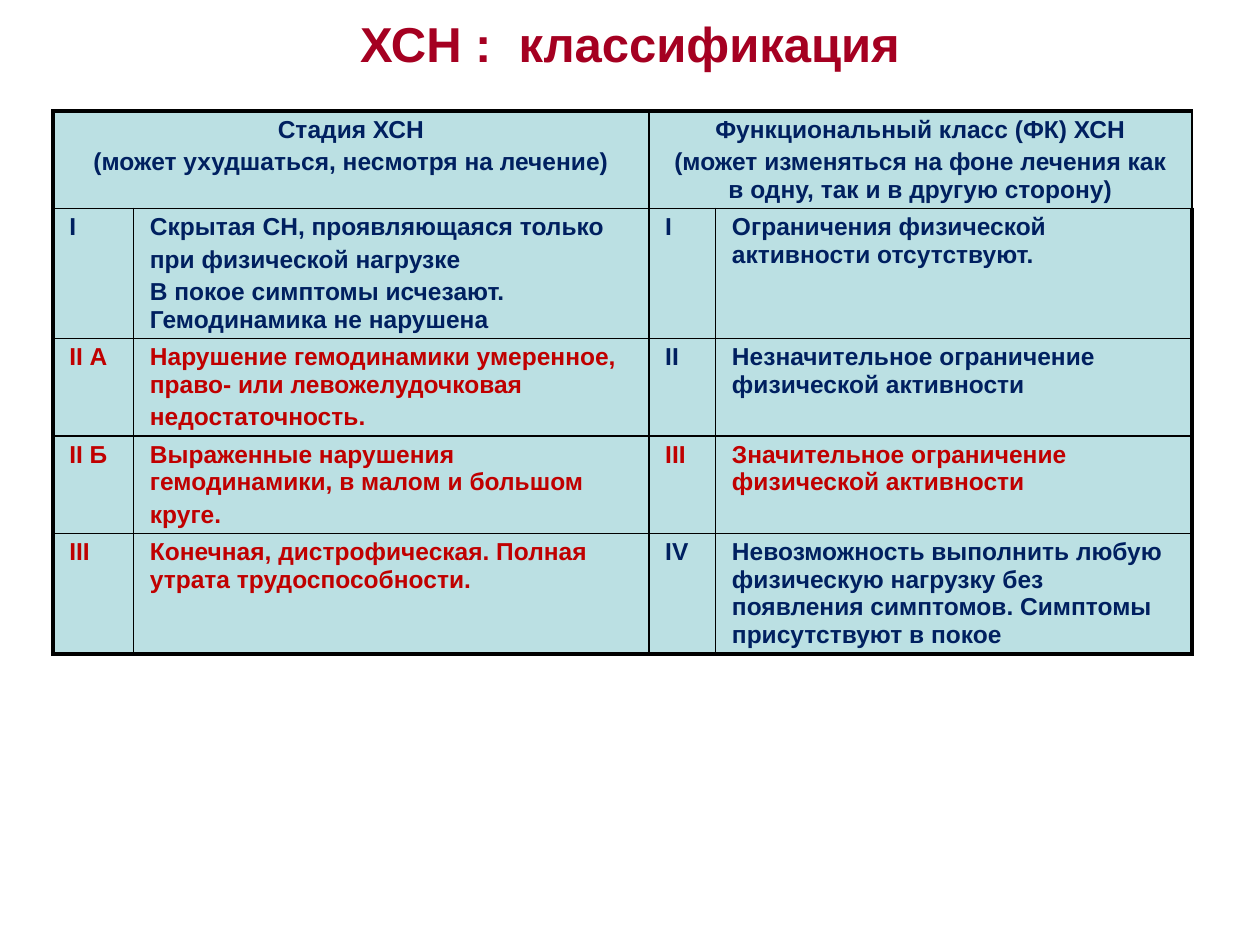
from dataclasses import dataclass

from lxml import etree
from pptx import Presentation
from pptx.dml.color import RGBColor
from pptx.enum.text import MSO_ANCHOR, MSO_AUTO_SIZE, PP_ALIGN
from pptx.oxml.ns import qn
from pptx.util import Inches, Pt

CENTER, LEFT = PP_ALIGN.CENTER, PP_ALIGN.LEFT
MIDDLE, TOP = MSO_ANCHOR.MIDDLE, MSO_ANCHOR.TOP
NO_AUTOFIT = MSO_AUTO_SIZE.NONE


@dataclass(frozen=True)
class Theme:
    font: str = "Arial"
    title_size: float = 28
    body_size: float = 14
    paragraph_gap: float = 2.8
    title: str = "A50021"
    body: str = "002060"
    accent: str = "C00000"
    cell: str = "BBE0E3"
    border: str = "000000"
    inner_line: float = 1
    outer_line: float = 2.25


@dataclass(frozen=True)
class Entry:
    """Text of one cell, one string for each paragraph."""
    lines: tuple[str, ...]
    color: str
    align: PP_ALIGN = LEFT


THEME = Theme()
PAGE_WIDTH, PAGE_HEIGHT = 10, 7.5
COLUMN_WIDTHS = (0.64, 4.09, 0.53, 3.78)
ROW_HEIGHTS = (0.77, 1.03, 0.77, 0.77, 0.95)
TABLE_LEFT, TABLE_TOP = 0.42, 0.88


def plain(*lines: str) -> Entry:
    return Entry(lines, THEME.body)


def severe(*lines: str) -> Entry:
    return Entry(lines, THEME.accent)


def heading(*lines: str) -> Entry:
    return Entry(lines, THEME.body, CENTER)


# Each heading spans two columns
HEADINGS = (
    heading("Стадия ХСН", "(может ухудшаться, несмотря на лечение)"),
    heading("Функциональный класс (ФК) ХСН",
            "(может изменяться на фоне лечения как в одну, так и в другую сторону)"),
)
ROWS = (
    (plain("I"),
     plain("Скрытая СН, проявляющаяся только", "при физической нагрузке",
           "В покое симптомы исчезают. Гемодинамика не нарушена"),
     plain("I"),
     plain("Ограничения физической активности отсутствуют.")),
    (severe("II А"),
     severe("Нарушение гемодинамики умеренное, право- или левожелудочковая",
            "недостаточность."),
     plain("II"),
     plain("Незначительное ограничение физической активности")),
    (severe("II Б"),
     severe("Выраженные нарушения гемодинамики, в малом и большом", "круге."),
     severe("III"),
     severe("Значительное ограничение физической активности")),
    (severe("III"),
     severe("Конечная, дистрофическая. Полная утрата трудоспособности."),
     plain("IV"),
     plain("Невозможность выполнить любую физическую нагрузку без появления "
           "симптомов. Симптомы присутствуют в покое")),
)


def format_paragraph(para, size: float, color: str, align: PP_ALIGN) -> None:
    para.alignment = align
    for span in para.runs:
        span.font.name = THEME.font
        span.font.size = Pt(size)
        span.font.bold = True
        span.font.color.rgb = RGBColor.from_string(color)


def add_title(page, text: str) -> None:
    box = page.shapes.title
    box.left, box.top = Inches(0.38), Inches(0.02 * PAGE_HEIGHT)
    box.width, box.height = Inches(PAGE_WIDTH - 2 * 0.38), Inches(0.38)
    frame = box.text_frame
    frame.text = text
    frame.word_wrap = True
    frame.auto_size = NO_AUTOFIT
    frame.vertical_anchor = MIDDLE
    format_paragraph(frame.paragraphs[0], THEME.title_size, THEME.title, CENTER)


def fill_cell(cell, entry: Entry) -> None:
    frame = cell.text_frame
    frame.text = "\n".join(entry.lines)
    for index, para in enumerate(frame.paragraphs):
        para.space_before = Pt(THEME.paragraph_gap if index else 0)
        format_paragraph(para, THEME.body_size, entry.color, entry.align)


def style_cell(cell, row: int, column: int) -> None:
    cell.margin_left = cell.margin_right = Inches(0.13)
    cell.margin_top = cell.margin_bottom = Inches(0.04)
    cell.vertical_anchor = TOP
    # Borders come before the fill and are thick on the table's outline
    outline = {
        "a:lnL": column == 0,
        "a:lnR": column == len(COLUMN_WIDTHS) - 1,
        "a:lnT": row == 0,
        "a:lnB": row == len(ROW_HEIGHTS) - 1,
    }
    properties = cell._tc.get_or_add_tcPr()
    for tag, is_outer in outline.items():
        width = THEME.outer_line if is_outer else THEME.inner_line
        line = etree.SubElement(properties, qn(tag), w=str(Pt(width)))
        paint = etree.SubElement(line, qn("a:solidFill"))
        etree.SubElement(paint, qn("a:srgbClr"), val=THEME.border)
    cell.fill.solid()
    cell.fill.fore_color.rgb = RGBColor.from_string(THEME.cell)


def add_classification(page) -> None:
    table = page.shapes.add_table(
        len(ROW_HEIGHTS), len(COLUMN_WIDTHS), Inches(TABLE_LEFT), Inches(TABLE_TOP),
        Inches(sum(COLUMN_WIDTHS)), Inches(sum(ROW_HEIGHTS))).table
    table.first_row = table.horz_banding = False
    for column, width in zip(table.columns, COLUMN_WIDTHS):
        column.width = Inches(width)
    for row, height in zip(table.rows, ROW_HEIGHTS):
        row.height = Inches(height)
    for row in range(len(ROW_HEIGHTS)):
        for column in range(len(COLUMN_WIDTHS)):
            style_cell(table.cell(row, column), row, column)

    # Heading row
    for index, entry in enumerate(HEADINGS):
        cell = table.cell(0, 2 * index)
        cell.merge(table.cell(0, 2 * index + 1))
        fill_cell(cell, entry)

    # Stages and functional classes
    for row, entries in enumerate(ROWS, start=1):
        for column, entry in enumerate(entries):
            fill_cell(table.cell(row, column), entry)


def main() -> None:
    deck = Presentation()
    deck.slide_width, deck.slide_height = Inches(PAGE_WIDTH), Inches(PAGE_HEIGHT)
    page = deck.slides.add_slide(deck.slide_layouts.get_by_name("Title Only"))
    add_title(page, "ХСН :  классификация")
    add_classification(page)
    deck.save("out.pptx")


if __name__ == "__main__":
    main()
